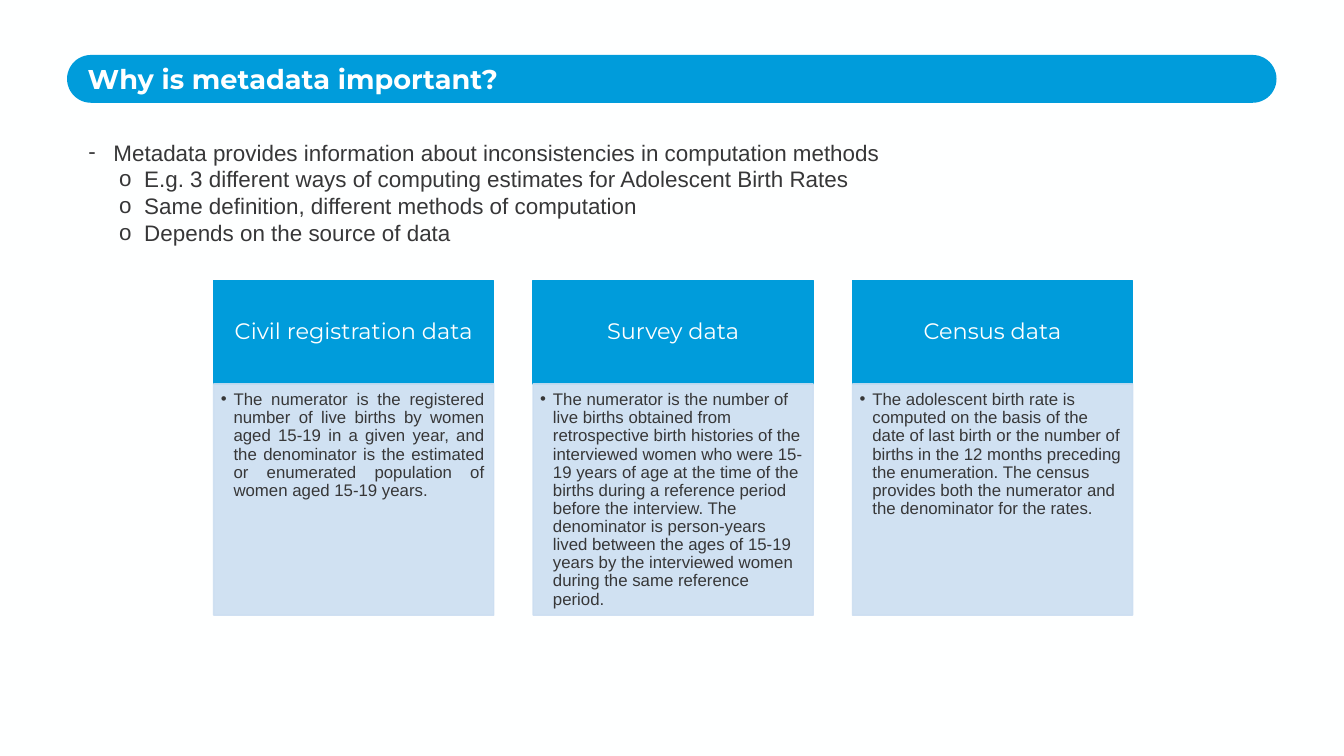
from lxml import etree
from pptx import Presentation
from pptx.dml.color import RGBColor
from pptx.enum import shapes, text
from pptx.oxml import ns
from pptx.util import Cm, Pt

COLORS = {"blue": "009CDB", "pale": "CCDEF1", "white": "FEFFFF", "ink": "373738"}
CARD_LEFT, CARD_STEP, CARD_WIDTH = 10.77, 16.1, 14.12
HEAD_TOP, HEAD_HEIGHT, BODY_HEIGHT = 14.15, 5.2, 11.65

POINTS = [
    ("Metadata provides information about inconsistencies in computation methods", 0),
    ("E.g. 3 different ways of computing estimates for Adolescent Birth Rates", 1),
    ("Same definition, different methods of computation", 1),
    ("Depends on the source of data", 1),
]
CARDS = [
    ("Civil registration data",
     "The numerator is the registered number of live births by women aged 15-19 in a given "
     "year, and the denominator is the estimated or enumerated population of women aged "
     "15-19 years.", text.PP_ALIGN.JUSTIFY),
    ("Survey data",
     "The numerator is the number of live births obtained from retrospective birth histories "
     "of the interviewed women who were 15-19 years of age at the time of the births during a "
     "reference period before the interview. The denominator is person-years lived between "
     "the ages of 15-19 years by the interviewed women during the same reference period.",
     text.PP_ALIGN.LEFT),
    ("Census data",
     "The adolescent birth rate is computed on the basis of the date of last birth or the "
     "number of births in the 12 months preceding the enumeration. The census provides both "
     "the numerator and the denominator for the rates.", text.PP_ALIGN.LEFT),
]


def rgb(name):
    return RGBColor.from_string(COLORS[name])


def write(p, content, size, font="Arial", color="ink", bold=False, align=text.PP_ALIGN.LEFT,
          spacing=1.0, bullet=None, margin=0, hanging=0, level=0):
    p.level = level
    pPr = p._p.get_or_add_pPr()
    if bullet:
        pPr.set("marL", str(Cm(margin)))
        pPr.set("indent", str(-Cm(hanging)))
        etree.SubElement(pPr, ns.qn("a:buFont"), typeface="Arial")
        etree.SubElement(pPr, ns.qn("a:buChar"), char=bullet)
    p.alignment, p.line_spacing = align, spacing
    p.space_before = p.space_after = Pt(0)
    r = p.add_run()
    r.text = content
    r.font.size, r.font.name, r.font.bold = Pt(size), font, bold
    r.font.color.rgb = rgb(color)


class Deck:
    """Holds the slide style and the current slide."""

    def __init__(self):
        self.prs = Presentation()
        self.prs.slide_width, self.prs.slide_height = Cm(67.74), Cm(38.1)
        self.s = self.prs.slides.add_slide(self.prs.slide_layouts[1])
        fill = self.s.background.fill
        fill.solid()
        fill.fore_color.rgb = rgb("white")

    def frame(self, sp, insets=(0, 0, 0, 0), anchor=text.MSO_ANCHOR.TOP):
        tf = sp.text_frame
        tf.word_wrap, tf.auto_size = True, text.MSO_AUTO_SIZE.NONE
        tf.vertical_anchor = anchor
        tf.margin_left, tf.margin_top, tf.margin_right, tf.margin_bottom = map(Cm, insets)
        return tf

    def placeholder(self, index, *box):
        sp = self.s.placeholders[index]
        sp.left, sp.top, sp.width, sp.height = map(Cm, box)
        return self.frame(sp)

    def box(self, kind, color, *box, outlined=True, opacity=100):
        sp = self.s.shapes.add_shape(kind, *map(Cm, box))
        sp.shadow.inherit = False
        sp.fill.solid()
        sp.fill.fore_color.rgb = rgb(color)
        if outlined:
            sp.line.color.rgb = rgb(color)
            sp.line.width = Pt(2)
        else:
            sp.line.fill.background()
        if opacity < 100:
            for clr in sp._element.spPr.iter(ns.qn("a:srgbClr")):
                etree.SubElement(clr, ns.qn("a:alpha"), val=str(opacity * 1000))
        return sp

    def title(self, content):
        bar = self.box(shapes.MSO_SHAPE.ROUNDED_RECTANGLE, "blue", 3.38, 2.77, 60.96, 2.41,
                       outlined=False)
        bar.adjustments[0] = 0.5
        self.s.shapes._spTree.insert(2, bar._element)
        tf = self.placeholder(0, 4.42, 3.12, 58.98, 3.33)
        write(tf.paragraphs[0], content, 38.8, "Montserrat", "white", bold=True)

    def points(self, items):
        tf = self.placeholder(1, 4.45, 6.99, 58.98, 5.46)
        for i, (content, level) in enumerate(items):
            p = tf.add_paragraph() if i else tf.paragraphs[0]
            write(p, content, 32, bullet="-o"[level], level=level,
                  margin=(1.27, 2.82)[level], hanging=1.27)

    def card(self, left, heading, content, align):
        rect = shapes.MSO_SHAPE.RECTANGLE
        head = self.box(rect, "blue", left, HEAD_TOP, CARD_WIDTH, HEAD_HEIGHT)
        tf = self.frame(head, (0.64, 0.36, 0.64, 0.36), text.MSO_ANCHOR.MIDDLE)
        write(tf.paragraphs[0], heading, 32, "Montserrat", "white",
              align=text.PP_ALIGN.CENTER, spacing=0.9)
        body = self.box(rect, "pale", left, HEAD_TOP + HEAD_HEIGHT, CARD_WIDTH, BODY_HEIGHT,
                        opacity=90)
        tf = self.frame(body, (0.36, 0.36, 0.48, 0.53))
        write(tf.paragraphs[0], content, 24, align=align, spacing=0.9, bullet="•",
              margin=0.64, hanging=0.64)


def main():
    deck = Deck()
    deck.title("Why is metadata important?")
    deck.points(POINTS)
    for i, card in enumerate(CARDS):
        deck.card(CARD_LEFT + i * CARD_STEP, *card)
    deck.prs.save("out.pptx")


if __name__ == "__main__":
    main()
